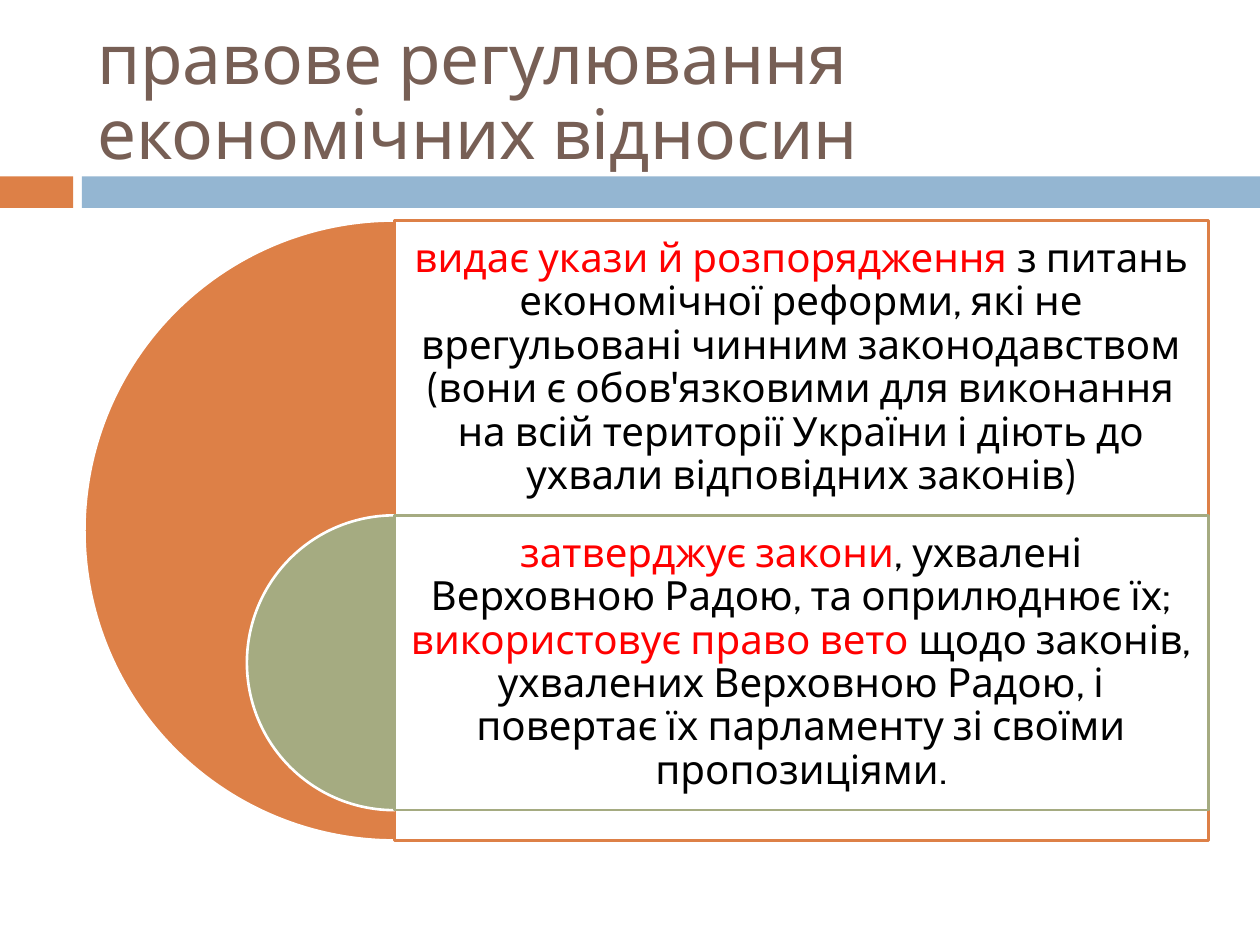
from pptx import Presentation
from pptx.dml.color import RGBColor
from pptx.enum.shapes import MSO_SHAPE
from pptx.enum.text import MSO_ANCHOR, MSO_AUTO_SIZE, PP_ALIGN
from pptx.oxml.ns import qn
from pptx.util import Inches, Pt
from lxml import etree

THEME = {
    "font": "Cabin", "title_size": Pt(39.6), "body_size": Pt(23),
    "title": RGBColor.from_string("775F55"),
    "orange": RGBColor.from_string("DD8047"),
    "blue": RGBColor.from_string("94B6D2"),
    "green": RGBColor.from_string("A5AB81"),
    "white": RGBColor.from_string("FFFFFF"),
    "black": RGBColor.from_string("000000"),
    "red": RGBColor.from_string("FF0000"),
}


def add_block(kind, left, top, width, height, fill, line=None):
    s = slide.shapes.add_shape(
        kind, Inches(left), Inches(top), Inches(width), Inches(height))
    s.shadow.inherit = False
    s.fill.solid()
    s.fill.fore_color.rgb = THEME[fill]
    if line:
        s.line.color.rgb = THEME[line]
        s.line.width = Pt(1.5)
    else:
        s.line.fill.background()
    return s


def style_run(r, size, color):
    r.font.name = THEME["font"]
    r.font.size = THEME[size]
    r.font.color.rgb = THEME[color]


prs = Presentation()
prs.slide_width, prs.slide_height = Inches(10), Inches(7.5)
slide = prs.slides.add_slide(prs.slide_layouts[5])

# Band under the title
add_block(MSO_SHAPE.RECTANGLE, 0, 1.4, 0.58, 0.25, "orange")
add_block(MSO_SHAPE.RECTANGLE, 0.65, 1.4, 9.35, 0.25, "blue")

# Title, drawn above the band
title = slide.shapes.title
slide.shapes._spTree.append(title._element)
title.left, title.top = Inches(0.67), Inches(0.25)
title.width, title.height = Inches(8.92), Inches(1.08)
tf = title.text_frame
tf.text = "правове регулювання економічних відносин"
tf.auto_size = MSO_AUTO_SIZE.NONE
tf.word_wrap = True
tf.vertical_anchor = MSO_ANCHOR.MIDDLE
p = tf.paragraphs[0]
p.alignment = PP_ALIGN.LEFT
p.line_spacing = 0.9
style_run(p.runs[0], "title_size", "title")

# Nested half circles, each with a panel starting at the shared centre line
CENTER_X, PANEL_WIDTH, TOP, ROW_HEIGHT = 3.13, 6.46, 1.75, 2.34
levels = [
    ("orange", 4.92, [
        ("видає укази й розпорядження ", "red"),
        ("з питань економічної\u00a0реформи, які не врегульовані чинним "
         "законодавством (вони є обов'язковими для\u00a0виконання на всій "
         "території України і діють до ухвали відповідних законів)", "black"),
    ]),
    ("green", ROW_HEIGHT, [
        ("затверджує закони", "red"),
        (", ухвалені Верховною Радою, та оприлюднює їх; ", "black"),
        ("використовує\u00a0право вето ", "red"),
        ("щодо законів, ухвалених Верховною Радою, і повертає їх "
         "парламенту зі\u00a0своїми пропозиціями.", "black"),
    ]),
]
for i, (color, diameter, parts) in enumerate(levels):
    top = TOP + i * ROW_HEIGHT
    half = add_block(MSO_SHAPE.PIE, CENTER_X - diameter / 2, top,
                     diameter, diameter, color, "white")
    half.adjustments[0] = 54   # 90 degrees
    half.adjustments[1] = 162  # 270 degrees

    panel = add_block(MSO_SHAPE.RECTANGLE, CENTER_X, top,
                      PANEL_WIDTH, diameter, "white", color)
    clr = panel._element.spPr.find(qn("a:solidFill"))[0]
    etree.SubElement(clr, qn("a:alpha")).set("val", "90000")

    box = slide.shapes.add_textbox(Inches(CENTER_X), Inches(top),
                                   Inches(PANEL_WIDTH), Inches(ROW_HEIGHT))
    tf = box.text_frame
    tf.word_wrap = True
    tf.vertical_anchor = MSO_ANCHOR.MIDDLE
    tf.margin_left = tf.margin_right = Inches(0.1)
    tf.margin_top = tf.margin_bottom = Inches(0.1)
    p = tf.paragraphs[0]
    p.alignment = PP_ALIGN.CENTER
    p.line_spacing = 0.9
    for text, text_color in parts:
        r = p.add_run()
        r.text = text
        style_run(r, "body_size", text_color)

prs.save("out.pptx")
